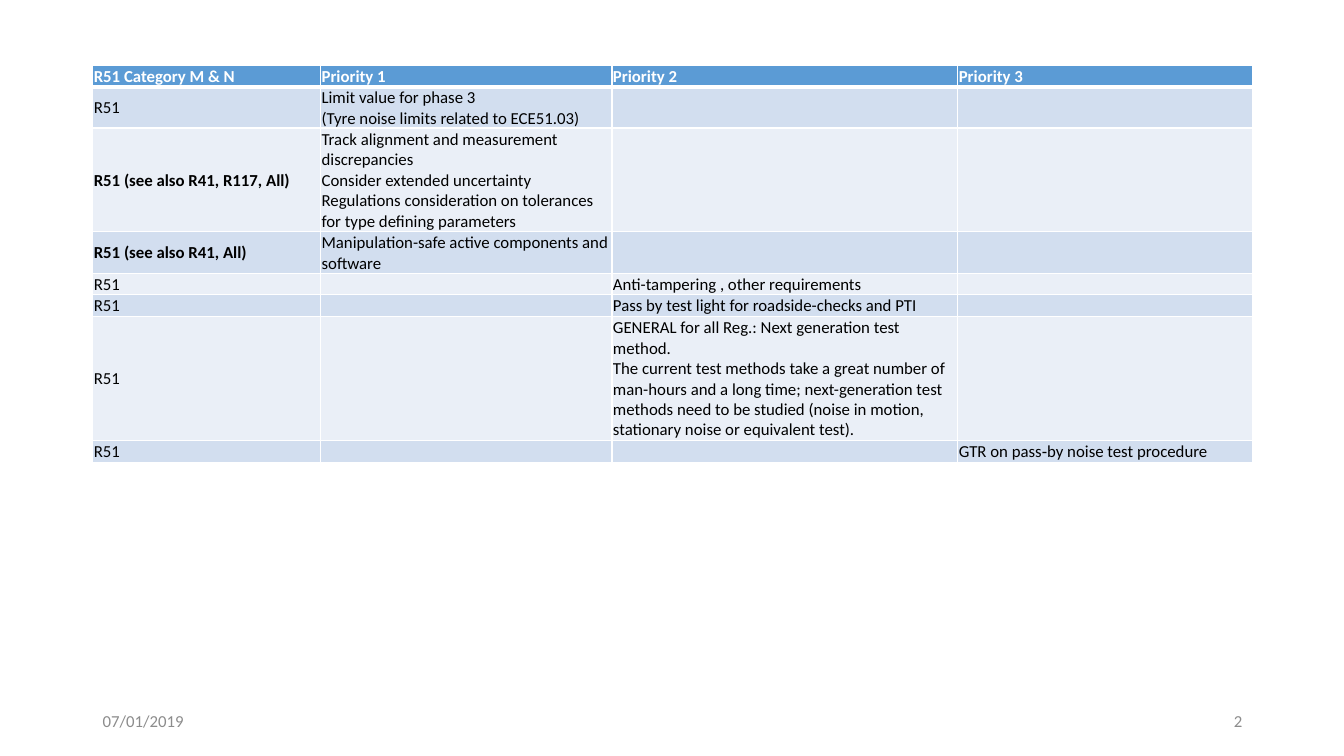
from lxml import etree
from pptx import Presentation
from pptx.dml.color import RGBColor
from pptx.enum.text import MSO_ANCHOR, PP_ALIGN
from pptx.oxml.ns import qn
from pptx.util import Inches, Pt

MIDDLE = MSO_ANCHOR.MIDDLE
LEFT, RIGHT = PP_ALIGN.LEFT, PP_ALIGN.RIGHT
FONT, SIZE = "Calibri", 12
WHITE, BLACK, GREY = "FFFFFF", "000000", "8C8C8C"
HEADER_FILL, BANDS = "5B9BD5", ("D2DEEF", "EAEFF7")

COL_WIDTHS = (2.26, 2.89, 3.43, 2.92)
HEADERS = ("R51 Category M & N", "Priority 1", "Priority 2", "Priority 3")
# Row height, category, priority column, topic
TOPICS = (
    (0.41, "R51", 1,
     "Limit value for phase 3\n(Tyre noise limits related to ECE51.03)"),
    (1.03, "R51 (see also R41, R117, All)", 1,
     "Track alignment and measurement discrepancies \n"
     "Consider extended uncertainty\n"
     "Regulations consideration on tolerances for type defining parameters"),
    (0.41, "R51 (see also R41, All)", 1,
     "Manipulation-safe active components and software"),
    (0.21, "R51", 2, "Anti-tampering , other requirements"),
    (0.22, "R51", 2, "Pass by test light for roadside-checks and PTI"),
    (1.23, "R51", 2,
     "GENERAL for all Reg.: Next generation test method. \n"
     "The current test methods take a great number of man-hours and a long "
     "time; next-generation test methods need to be studied (noise in motion, "
     "stationary noise or equivalent test)."),
    (0.22, "R51", 3, "GTR on pass‐by noise test procedure"),
)


def rgb(value):
    return RGBColor.from_string(value)


def write(p, text, color, bold=False):
    for i, line in enumerate(text.split("\n")):
        if i:
            p.add_line_break()
        r = p.add_run()
        r.text = line
        r.font.name, r.font.size = FONT, Pt(SIZE)
        r.font.bold = bold
        r.font.color.rgb = rgb(color)


def set_borders(cell, bottom):
    tc_pr = cell._tc.get_or_add_tcPr()
    for side, width in (("L", 1), ("R", 1), ("T", 1), ("B", bottom)):
        ln = etree.SubElement(tc_pr, qn(f"a:ln{side}"), w=str(Pt(width)))
        fill = etree.SubElement(ln, qn("a:solidFill"))
        etree.SubElement(fill, qn("a:srgbClr"), val=WHITE)


def format_cell(cell, text, fill, color, bold, bottom=1):
    cell.margin_left = cell.margin_top = cell.margin_right = Inches(0.01)
    cell.margin_bottom = 0
    cell.vertical_anchor = MIDDLE
    set_borders(cell, bottom)
    cell.fill.solid()
    cell.fill.fore_color.rgb = rgb(fill)
    p = cell.text_frame.paragraphs[0]
    if text:
        write(p, text, color, bold)
    else:
        # Keep empty cells from stretching the short rows
        etree.SubElement(p._p, qn("a:endParaRPr"), sz=str(SIZE * 100))


def add_priority_table(s, left, top):
    heights = [0.21] + [topic[0] for topic in TOPICS]
    table = s.shapes.add_table(
        len(heights), len(COL_WIDTHS), Inches(left), Inches(top),
        Inches(sum(COL_WIDTHS)), Inches(sum(heights))).table
    for col, width in zip(table.columns, COL_WIDTHS):
        col.width = Inches(width)
    for row, height in zip(table.rows, heights):
        row.height = Inches(height)

    # Header row
    for c, text in enumerate(HEADERS):
        format_cell(table.cell(0, c), text, HEADER_FILL, WHITE, True, bottom=3)

    # One topic per row, in the column of its priority
    for n, (_, category, priority, topic) in enumerate(TOPICS):
        texts = {0: category, priority: topic}
        for c in range(len(COL_WIDTHS)):
            bold = c == 0 and "see also" in category
            format_cell(table.cell(n + 1, c), texts.get(c, ""),
                        BANDS[n % 2], BLACK, bold)


def add_footer_text(s, left, top, text, align):
    tf = s.shapes.add_textbox(Inches(left), Inches(top),
                              Inches(3), Inches(0.4)).text_frame
    tf.word_wrap = True
    tf.vertical_anchor = MIDDLE
    p = tf.paragraphs[0]
    p.alignment = align
    write(p, text, GREY)


def main():
    prs = Presentation()
    prs.slide_width, prs.slide_height = Inches(13.33), Inches(7.5)
    s = prs.slides.add_slide(prs.slide_layouts[6])
    add_footer_text(s, 0.92, 6.95, "07/01/2019", LEFT)
    add_footer_text(s, 9.42, 6.95, "2", RIGHT)
    add_priority_table(s, 0.92, 0.65)
    prs.save("out.pptx")


if __name__ == "__main__":
    main()
